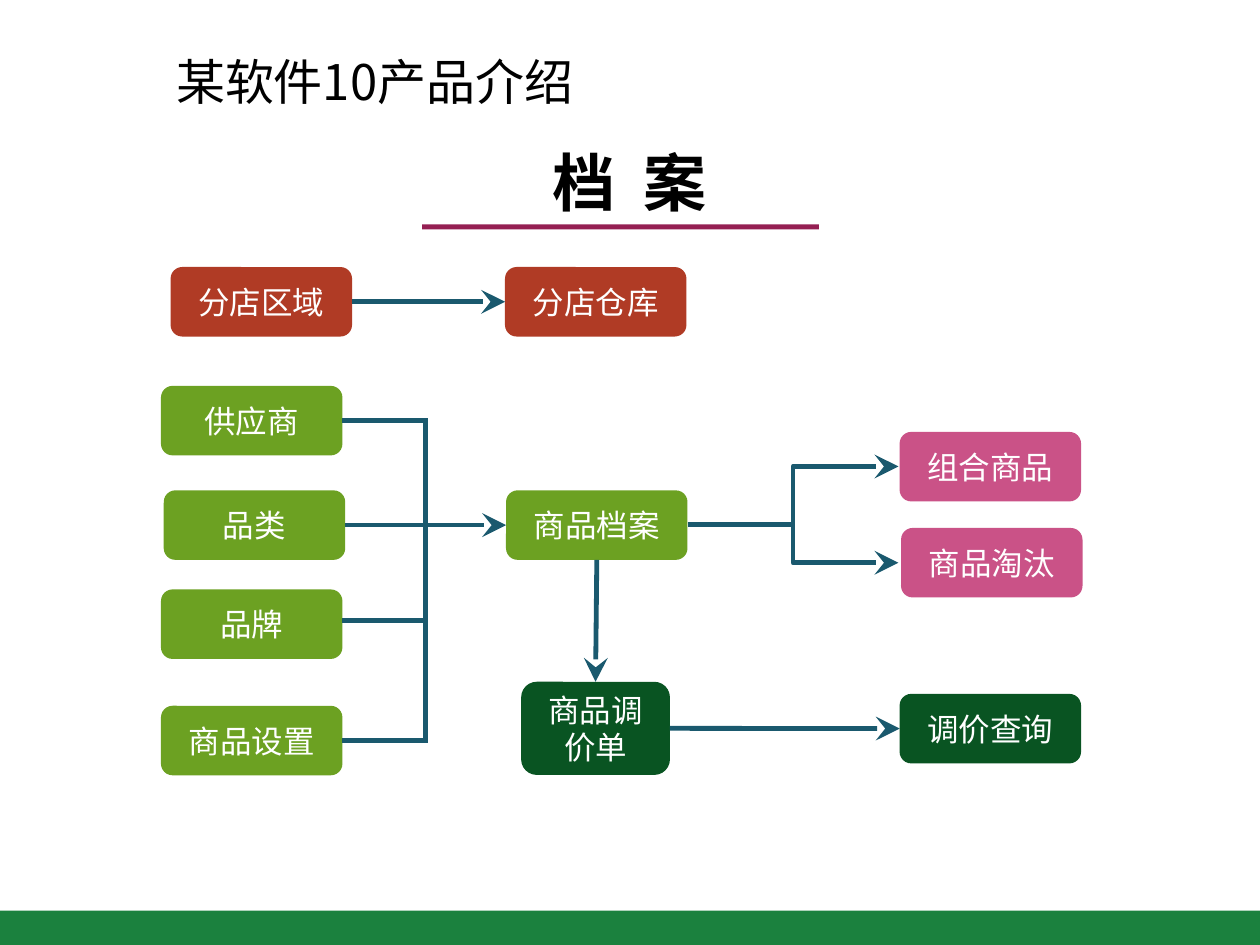
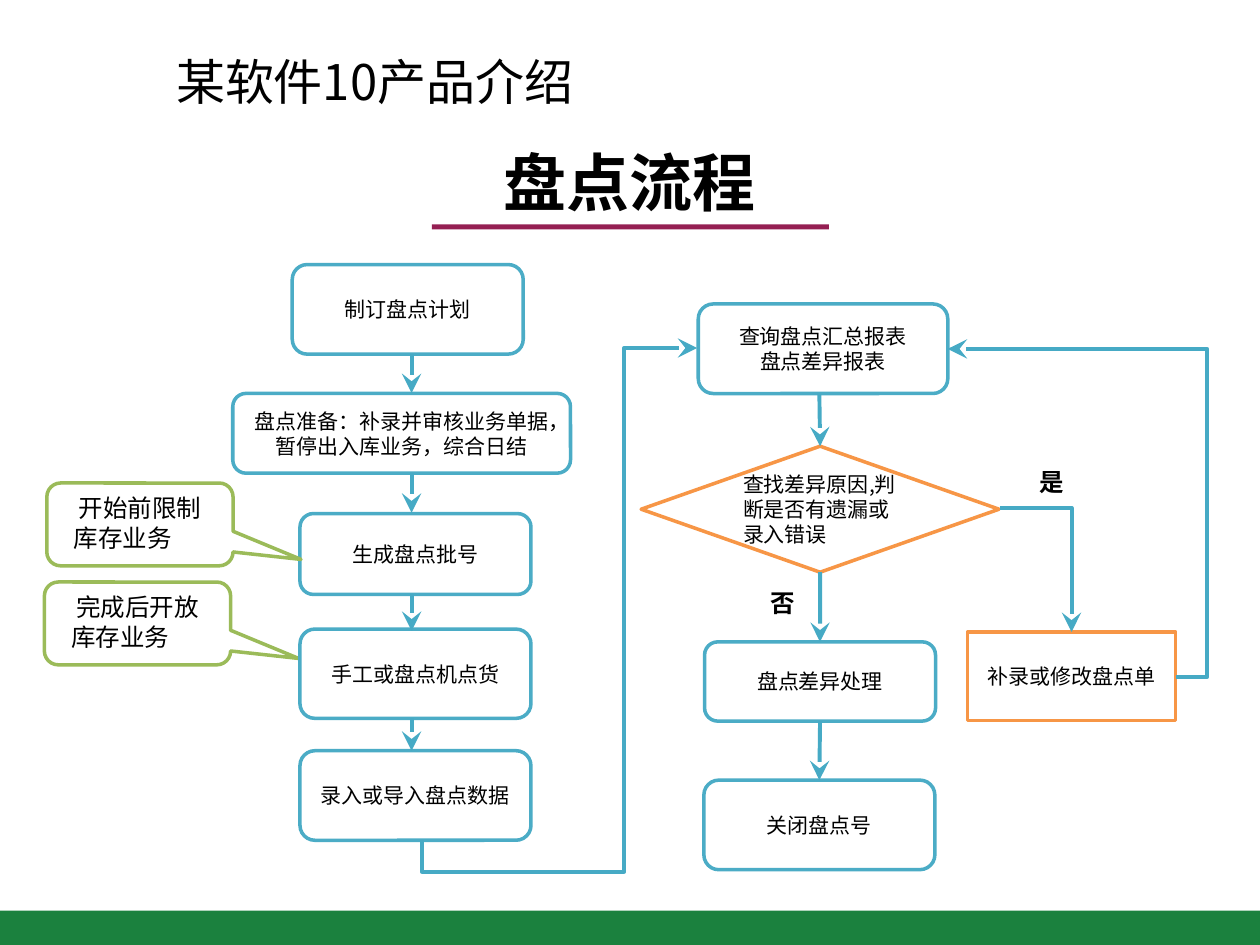
"""Builds two flow slides: the archive structure and the stocktaking process."""
from dataclasses import dataclass
from typing import NamedTuple, Union

from lxml import etree
from pptx import Presentation
from pptx.dml.color import RGBColor
from pptx.enum.shapes import MSO_CONNECTOR, MSO_SHAPE
from pptx.enum.text import MSO_ANCHOR, PP_ALIGN
from pptx.oxml.ns import qn
from pptx.util import Pt

RECT = MSO_SHAPE.RECTANGLE
ROUNDED = MSO_SHAPE.ROUNDED_RECTANGLE
DIAMOND = MSO_SHAPE.DIAMOND
CALLOUT = MSO_SHAPE.ROUNDED_RECTANGULAR_CALLOUT
STRAIGHT, ELBOW = MSO_CONNECTOR.STRAIGHT, MSO_CONNECTOR.ELBOW
LEFT, CENTER = PP_ALIGN.LEFT, PP_ALIGN.CENTER
TOP, MIDDLE = MSO_ANCHOR.TOP, MSO_ANCHOR.MIDDLE
SIDE_TOP, SIDE_LEFT, SIDE_BOTTOM, SIDE_RIGHT = range(4)

CJK = "Noto Sans CJK SC"
BLACK, WHITE = "000000", "FFFFFF"
BAND_GREEN, RULE_PURPLE = "1B813E", "951F53"
BRANCH_RED, GOODS_GREEN, PRICE_GREEN, RESULT_PINK = "B03B25", "6CA122", "095422", "CA5287"
STEP_BLUE, CHECK_ORANGE, NOTE_GREEN = "4BACC6", "F79646", "9BBB59"


class Point(NamedTuple):
    """A free position on the slide."""
    x: float
    y: float


class Site(NamedTuple):
    """The middle of one side of a named step."""
    step: str
    side: int


End = Union[Point, Site]


@dataclass(frozen=True)
class TextStyle:
    """Type settings of a whole text body."""
    size: float
    color: str = BLACK
    font: str = CJK
    bold: bool = False
    align: PP_ALIGN = CENTER
    anchor: MSO_ANCHOR = MIDDLE
    spacing: float = 0


@dataclass(frozen=True)
class Look:
    """Outline, fill and type of a kind of step."""
    text: TextStyle
    fill: str = WHITE
    line: str = ""
    preset: MSO_SHAPE = ROUNDED


@dataclass(frozen=True)
class Step:
    """One box of a flow."""
    text: str
    left: float
    top: float
    look: Look
    width: float = 103.7
    height: float = 39.7


@dataclass(frozen=True)
class Pen:
    """Colour and width of a flow's lines."""
    color: str
    width: float


@dataclass(frozen=True)
class Link:
    """A straight line between two ends."""
    start: End
    end: End
    arrow: bool = True


@dataclass(frozen=True)
class Bend:
    """An angled arrow between two points."""
    start: Point
    end: Point
    preset: str = "bentConnector3"
    adjustments: tuple[int, ...] = ()
    quarter_turn: bool = False


TITLE = TextStyle(28, align=LEFT, anchor=TOP)
HEADING = TextStyle(36, bold=True)
SPACED_HEADING = TextStyle(36, bold=True, spacing=4)
BRANCH_LABEL = TextStyle(14, font="Arial", bold=True, align=LEFT, anchor=TOP)
NOTE_TEXT = TextStyle(14, font="Calibri", anchor=TOP)
ARCHIVE_TEXT = TextStyle(18, WHITE)
BRANCH, GOODS, PRICE, RESULT = (
    Look(ARCHIVE_TEXT, fill) for fill in (BRANCH_RED, GOODS_GREEN, PRICE_GREEN, RESULT_PINK))
STEP = Look(TextStyle(12), line=STEP_BLUE)
FIX = Look(TextStyle(12), line=CHECK_ORANGE, preset=RECT)
CHECK = Look(TextStyle(12, align=LEFT), line=CHECK_ORANGE, preset=DIAMOND)
NOTE = Look(NOTE_TEXT, line=NOTE_GREEN, preset=CALLOUT)

ARCHIVE_PEN = Pen("1A596E", 2.75)
STOCK_PEN = Pen("46AAC5", 2.25)

ARCHIVE_STEPS = [
    Step("分店区域", 97.5, 152.6, BRANCH),
    Step("分店仓库", 288.6, 152.6, BRANCH),
    Step("商品档案", 289.2, 280.2, GOODS),
    Step("供应商", 92, 220.5, GOODS),
    Step("品类", 93.6, 280.2, GOODS),
    Step("品牌", 92, 336.8, GOODS),
    Step("商品设置", 92, 403.3, GOODS),
    Step("商品调价单", 297.8, 389.6, PRICE, 85, 53.2),
    Step("组合商品", 514.1, 246.8, RESULT),
    Step("商品淘汰", 514.9, 301.7, RESULT),
    Step("调价查询", 514.1, 396.5, PRICE),
]
BUS_X = 243.2
ARCHIVE_LINKS = [
    Link(Site("分店区域", SIDE_RIGHT), Site("分店仓库", SIDE_LEFT)),
    Link(Site("品类", SIDE_RIGHT), Site("商品档案", SIDE_LEFT)),
    Link(Site("供应商", SIDE_RIGHT), Point(BUS_X, 240.35), False),
    Link(Point(195.7, 354.6), Point(BUS_X, 354.6), False),
    Link(Site("商品设置", SIDE_RIGHT), Point(BUS_X, 423.15), False),
    Link(Point(BUS_X, 239), Point(BUS_X, 424.5), False),
    Link(Site("商品档案", SIDE_BOTTOM), Site("商品调价单", SIDE_TOP)),
    Link(Site("商品调价单", SIDE_RIGHT), Site("调价查询", SIDE_LEFT)),
]
ARCHIVE_BENDS = [Bend(Point(393, 300), Point(513.4, y)) for y in (266.6, 321.6)]

CHECK_QUESTION = "查找差异原因,判断是否有遗漏或录入错误"
STOCK_STEPS = [
    Step("完成后开放\n库存业务", 25.4, 332.6, NOTE, 106.4, 47.3),
    Step("录入或导入盘点数据", 171.4, 429, STEP, 132, 51.2),
    Step("关闭盘点号", 402.2, 445.8, STEP, 132, 51.2),
    Step("查询盘点汇总报表\n盘点差异报表", 399, 173.7, STEP, 142.6, 51.2),
    Step("制订盘点计划", 167, 151.2, STEP, 132, 51.2),
    Step("盘点准备：补录并审核业务单据，暂停出入库业务，综合日结",
         133, 224.8, STEP, 193, 45.6),
    Step("生成盘点批号", 171.4, 293.5, STEP, 132, 46.2),
    Step("手工或盘点机点货", 171.4, 359.5, STEP, 132, 51),
    Step("开始前限制\n库存业务", 26.8, 276, NOTE, 106.4, 47.3),
    Step("盘点差异处理", 402.6, 366.8, STEP, 132, 45.3),
    Step("补录或修改盘点单", 552.9, 361.1, FIX, 119, 50.6),
    Step(CHECK_QUESTION, 366.4, 255, CHECK, 204.5, 72),
]
PREPARE_X = 235.2
STOCK_LINKS = [
    *(Link(Point(PREPARE_X, top), Point(PREPARE_X, bottom))
      for top, bottom in ((202.4, 224.6), (270.4, 293), (339.7, 360.5), (410.5, 429))),
    Link(Point(468.2, 224.9), Site(CHECK_QUESTION, SIDE_TOP)),
    Link(Site(CHECK_QUESTION, SIDE_BOTTOM), Site("盘点差异处理", SIDE_TOP)),
    Link(Site("盘点差异处理", SIDE_BOTTOM), Site("关闭盘点号", SIDE_TOP)),
]
STOCK_BENDS = [
    Bend(Point(241.2, 480.2), Point(398.4, 198.9), "bentConnector4", (-6400, 73400), True),
    Bend(Point(571.4, 290.2), Point(612.3, 361.1), "bentConnector2"),
    Bend(Point(671.9, 386.8), Point(541.6, 199.4), adjustments=(-13800,)),
]
STOCK_LABELS = [("是", 586.8, 263.5), ("否", 433.4, 332.6)]


def rgb(color: str) -> RGBColor:
    """Turn a hex string into a colour."""
    return RGBColor.from_string(color)


def write(shape, text: str, style: TextStyle) -> None:
    """Fill a shape with styled paragraphs, one for each line."""
    frame = shape.text_frame
    frame.word_wrap = True
    frame.vertical_anchor = style.anchor
    frame.text = text
    for paragraph in frame.paragraphs:
        paragraph.alignment = style.align
        font = paragraph.font
        font.size, font.bold, font.name = Pt(style.size), style.bold, style.font
        font.color.rgb = rgb(style.color)
        defaults = paragraph._p.pPr.find(qn("a:defRPr"))
        etree.SubElement(defaults, qn("a:ea"), typeface=CJK)
        if style.spacing:
            defaults.set("spc", str(round(style.spacing * 100)))


def add_text(slide, text: str, style: TextStyle, left: float, top: float,
             width: float, height: float) -> None:
    """Add a text box."""
    box = slide.shapes.add_textbox(Pt(left), Pt(top), Pt(width), Pt(height))
    write(box, text, style)


def add_block(slide, preset: MSO_SHAPE, fill: str, left: float, top: float,
              width: float, height: float, line: str = ""):
    """Add a flat shape with an optional outline."""
    block = slide.shapes.add_shape(preset, Pt(left), Pt(top), Pt(width), Pt(height))
    block.shadow.inherit = False
    block.fill.solid()
    block.fill.fore_color.rgb = rgb(fill)
    if line:
        block.line.color.rgb = rgb(line)
        block.line.width = Pt(2)
    else:
        block.line.fill.background()
    return block


def add_step(slide, step: Step):
    """Add one step of a flow."""
    look = step.look
    block = add_block(slide, look.preset, look.fill, step.left, step.top,
                      step.width, step.height, look.line)
    write(block, step.text, look.text)
    if look.preset == CALLOUT:
        for index, value in enumerate((0.865, 0.423, 0.167)):
            block.adjustments[index] = value
        second_line = block.text_frame.paragraphs[1]
        second_line.alignment = LEFT
        second_line._p.pPr.set("marL", str(Pt(6)))
    return block


def draw(connector, pen: Pen, arrow: bool) -> None:
    """Style a connector, with an arrowhead if asked."""
    connector.line.color.rgb = rgb(pen.color)
    connector.line.width = Pt(pen.width)
    properties = connector._element.spPr
    if arrow:
        etree.SubElement(properties.find(qn("a:ln")), qn("a:tailEnd"),
                         type="stealth", w="lg", len="lg")
    etree.SubElement(properties, qn("a:effectLst"))


def add_link(slide, link: Link, pen: Pen, blocks: dict) -> None:
    """Add a straight line and join it to the steps it names."""
    start, end = (Point(0, 0) if isinstance(tip, Site) else tip
                  for tip in (link.start, link.end))
    connector = slide.shapes.add_connector(
        STRAIGHT, Pt(start.x), Pt(start.y), Pt(end.x), Pt(end.y))
    for tip, join in ((link.start, connector.begin_connect),
                      (link.end, connector.end_connect)):
        if isinstance(tip, Site):
            join(blocks[tip.step], tip.side)
    draw(connector, pen, link.arrow)


def add_bend(slide, bend: Bend, pen: Pen) -> None:
    """Add an angled arrow, turned about its centre if needed."""
    (x1, y1), (x2, y2) = bend.start, bend.end
    if bend.quarter_turn:
        mid_x, mid_y = (x1 + x2) / 2, (y1 + y2) / 2
        x1, y1, x2, y2 = (mid_x + y1 - mid_y, mid_y + mid_x - x1,
                          mid_x + y2 - mid_y, mid_y + mid_x - x2)
    connector = slide.shapes.add_connector(ELBOW, Pt(x1), Pt(y1), Pt(x2), Pt(y2))
    properties = connector._element.spPr
    if bend.quarter_turn:
        properties.find(qn("a:xfrm")).set("rot", "5400000")
    geometry = properties.find(qn("a:prstGeom"))
    geometry.set("prst", bend.preset)
    for index, value in enumerate(bend.adjustments, 1):
        etree.SubElement(geometry.find(qn("a:avLst")), qn("a:gd"),
                         name=f"adj{index}", fmla=f"val {value}")
    draw(connector, pen, True)


def add_flow_slide(deck, heading: str, style: TextStyle, rule_left: float, pen: Pen,
                   steps: list[Step], links: list[Link], bends: list[Bend]):
    """Add a slide with the shared frame, its heading and its flow."""
    slide = deck.slides.add_slide(deck.slide_layouts[6])
    add_block(slide, RECT, BAND_GREEN, 0, 520.3, 720, 19.7)
    add_text(slide, "某软件10产品介绍", TITLE, 93.6, 26, 374.4, 41)
    add_text(slide, heading, style, 54, 66.2, 612, 75)
    add_block(slide, RECT, RULE_PURPLE, rule_left, 128.2, 226.8, 2.9)
    blocks = {step.text: add_step(slide, step) for step in steps}
    for link in links:
        add_link(slide, link, pen, blocks)
    for bend in bends:
        add_bend(slide, bend, pen)
    return slide


def main() -> None:
    """Build and save the deck."""
    deck = Presentation()
    deck.slide_width, deck.slide_height = Pt(720), Pt(540)
    add_flow_slide(deck, "档 案", SPACED_HEADING, 241.2, ARCHIVE_PEN,
                   ARCHIVE_STEPS, ARCHIVE_LINKS, ARCHIVE_BENDS)
    stock = add_flow_slide(deck, "盘点流程", HEADING, 246.8, STOCK_PEN,
                           STOCK_STEPS, STOCK_LINKS, STOCK_BENDS)
    for text, left, top in STOCK_LABELS:
        add_text(stock, text, BRANCH_LABEL, left, top, 28.1, 23.8)
    deck.save("out.pptx")


if __name__ == "__main__":
    main()
